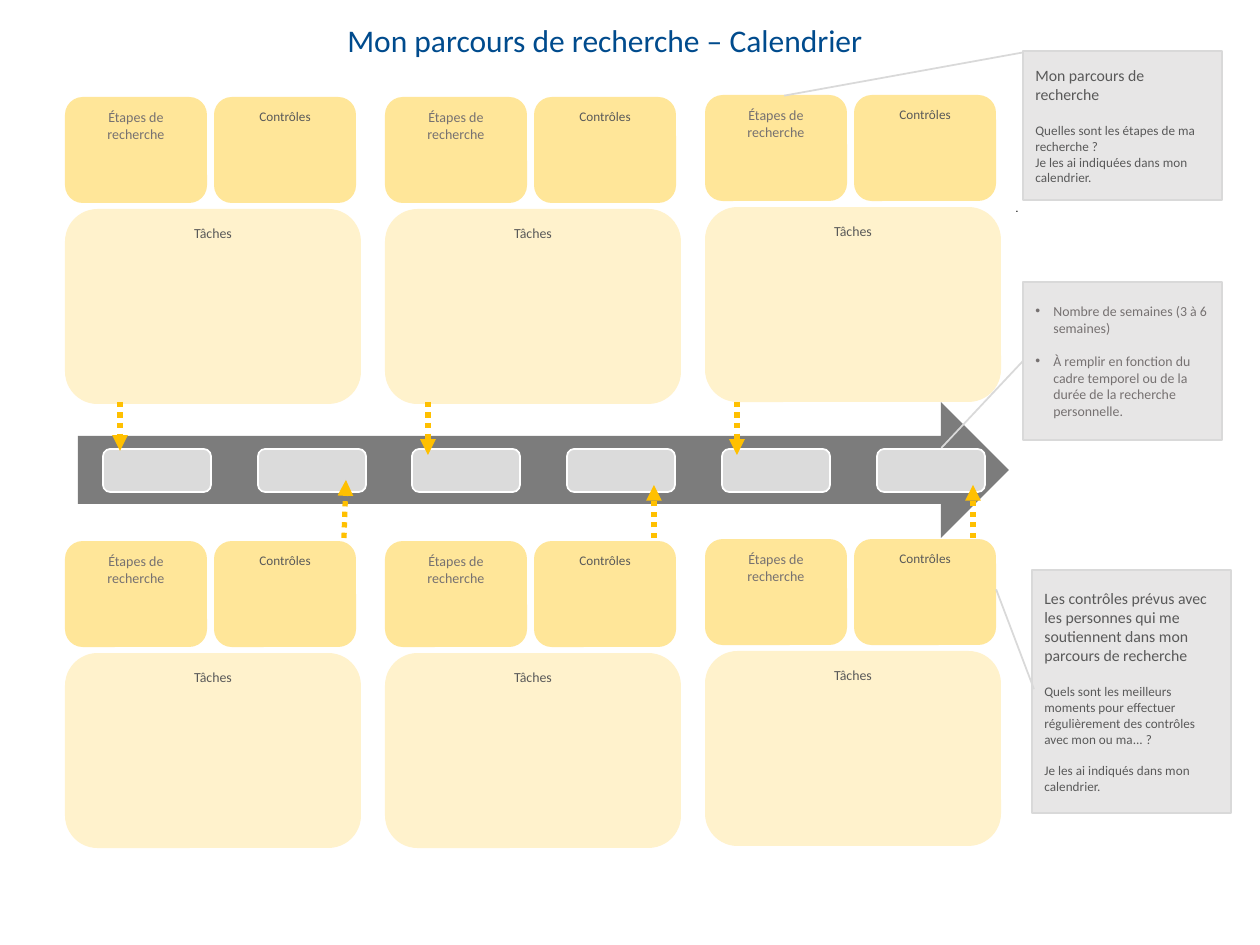
from lxml.etree import SubElement
from pptx import Presentation
from pptx.dml.color import RGBColor
from pptx.enum.dml import MSO_LINE
from pptx.enum.shapes import MSO_CONNECTOR, MSO_SHAPE
from pptx.enum.text import MSO_ANCHOR, PP_ALIGN
from pptx.oxml.ns import qn
from pptx.util import Pt

EMU_PER_PX = 914400 / 126
GREY_TEXT, LIGHT_TEXT = "595959", "767171"


def px(length):
    return round(length * EMU_PER_PX)


def color(hex_string):
    return RGBColor.from_string(hex_string)


def write(box, text, size=8, ink=GREY_TEXT, font="Calibri",
          align=PP_ALIGN.LEFT, before=0, bullet=False):
    """Write one paragraph, using the empty first one if it is free."""
    frame = box.text_frame
    frame.word_wrap = True
    para = frame.paragraphs[0]
    if para.runs:
        para = frame.add_paragraph()
    para.alignment = align
    para.space_before = Pt(before)
    if bullet:
        properties = para._p.get_or_add_pPr()
        properties.set("marL", str(px(18)))
        properties.set("indent", str(-px(18)))
        SubElement(properties, qn("a:buFont"), typeface="Arial")
        SubElement(properties, qn("a:buChar"), char="•")
    span = para.add_run()
    span.text = text
    span.font.size = Pt(size)
    span.font.name = font
    span.font.color.rgb = color(ink)


def add_text(shapes, left, top, width, height, text, **style):
    box = shapes.add_textbox(px(left), px(top), px(width), px(height))
    write(box, text, **style)


def add_box(shapes, kind, left, top, width, height, fill, line=None,
            anchor=MSO_ANCHOR.TOP):
    box = shapes.add_shape(kind, px(left), px(top), px(width), px(height))
    box.shadow.inherit = False
    box.fill.solid()
    box.fill.fore_color.rgb = color(fill)
    if line:
        box.line.color.rgb = color(line)
        box.line.width = Pt(1)
    else:
        box.line.fill.background()
    box.text_frame.vertical_anchor = anchor
    return box


def add_dotted_arrow(shapes, start, end):
    arrow = shapes.add_connector(MSO_CONNECTOR.STRAIGHT, *map(px, start + end))
    arrow.line.color.rgb = color("FFC000")
    arrow.line.width = Pt(3)
    arrow.line.dash_style = MSO_LINE.ROUND_DOT
    SubElement(arrow.line._get_or_add_ln(), qn("a:tailEnd"), type="triangle")
    SubElement(arrow._element.spPr, qn("a:effectLst"))


def add_timeline(page, left, top, width, height):
    """Big arrow with six evenly spaced week fields."""
    shapes = page.shapes.add_group_shape().shapes
    add_box(shapes, MSO_SHAPE.RIGHT_ARROW, left, top, width, height, "7C7C7C")
    for week in range(6):
        add_box(shapes, MSO_SHAPE.ROUNDED_RECTANGLE,
                left + 25 + round(week * 154.7), top + 47, 108, 43,
                "DBDBDB", line="FFFFFF")


def add_stage(shapes, left, top):
    """Steps and checks side by side, tasks below."""
    cards = [
        (0, 0, 142, 106, "FFE699", "Étapes de recherche", 8, LIGHT_TEXT),
        (149, 0, 142, 106, "FFE699", "Contrôles", 7.5, GREY_TEXT),
        (0, 112, 296, 195, "FFF2CC", "Tâches", 7.9, GREY_TEXT),
    ]
    for x, y, width, height, fill, text, size, ink in cards:
        card = add_box(shapes, MSO_SHAPE.ROUNDED_RECTANGLE,
                       left + x, top + y, width, height, fill)
        write(card, text, size=size, ink=ink, align=PP_ALIGN.CENTER)


def add_stage_row(page, left, top):
    shapes = page.shapes.add_group_shape().shapes
    for column, lift in enumerate((0, 0, 2)):
        add_stage(shapes, left + column * 320, top - lift)


def add_callout(page, left, top, width, height, pointer, paragraphs):
    box = add_box(page.shapes, MSO_SHAPE.LINE_CALLOUT_1, left, top, width,
                  height, "E7E6E6", line="D9D9D9", anchor=MSO_ANCHOR.MIDDLE)
    for index, value in enumerate(pointer):
        box.adjustments[index] = value
    for text, style in paragraphs:
        write(box, text, **style)


def main():
    deck = Presentation()
    deck.slide_width, deck.slide_height = px(1260), px(945)
    page = deck.slides.add_slide(deck.slide_layouts[6])

    # Title and the small dot
    add_text(page.shapes, -25, 15, 1260, 72,
             "Mon parcours de recherche – Calendrier",
             size=18, ink="004B8D", align=PP_ALIGN.CENTER)
    add_text(page.shapes, 1003, 194, 237, 26, ".",
             size=6.8, ink="000000", font="Arial")

    # Timeline with the stages above and below it
    add_timeline(page, 78, 402, 931, 136)
    for start, end in (((344, 538), (346, 480)), ((654, 538), (654, 485)),
                       ((973, 538), (973, 485))):
        add_dotted_arrow(page.shapes, start, end)
    for top in (97, 541):
        add_stage_row(page, 65, top)
    for x, tip in ((120, 451), (428, 455), (737, 455)):
        add_dotted_arrow(page.shapes, (x, 402), (x, tip))

    # Explanations on the right
    heading = {"size": 9}
    body = {"size": 7.5}
    body_after_gap = {"size": 7.5, "before": 11}
    item = {"size": 7.9, "ink": LIGHT_TEXT, "bullet": True}
    add_callout(page, 1023, 51, 199, 149, (0.01, 0, 0.3, -1.2), [
        ("Mon parcours de recherche", heading),
        ("Quelles sont les étapes de ma recherche ?", body_after_gap),
        ("Je les ai indiquées dans mon calendrier.", body),
    ])
    add_callout(page, 1023, 282, 199, 158, (0.5, 0, 1.05, -0.41), [
        ("Nombre de semaines (3 à 6 semaines)", item),
        ("À remplir en fonction du cadre temporel ou de la durée de la "
         "recherche personnelle.", {**item, "before": 9.6}),
    ])
    add_callout(page, 1032, 570, 199, 243, (0.49, 0.01, 0.08, -0.18), [
        ("Les contrôles prévus avec les personnes qui me soutiennent dans "
         "mon parcours de recherche", heading),
        ("Quels sont les meilleurs moments pour effectuer régulièrement des "
         "contrôles avec mon ou ma... ?", body_after_gap),
        ("Je les ai indiqués dans mon calendrier.", {**body, "before": 9}),
    ])

    deck.save("out.pptx")


if __name__ == "__main__":
    main()
